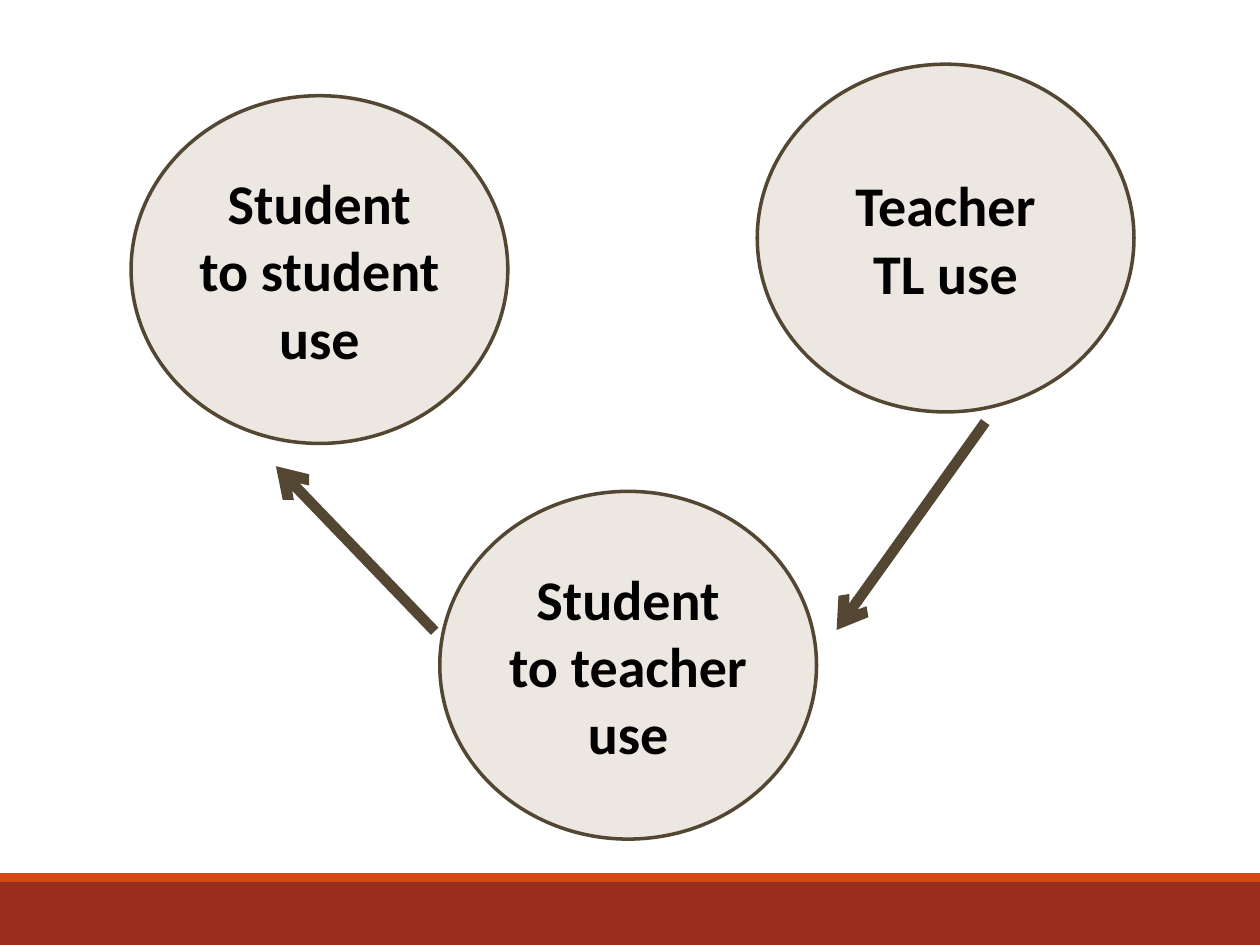
from lxml.etree import SubElement
from pptx import Presentation
from pptx.dml.color import RGBColor
from pptx.enum.shapes import MSO_CONNECTOR, MSO_SHAPE
from pptx.enum.text import MSO_ANCHOR, PP_ALIGN
from pptx.oxml.ns import qn
from pptx.util import Inches, Pt

BROWN = "534733"
CIRCLE_WIDTH, CIRCLE_HEIGHT = 2.99, 2.76


def color(hex_string):
    return RGBColor.from_string(hex_string)


def add_filled_shape(slide, kind, left, top, width, height, fill):
    shape = slide.shapes.add_shape(
        kind, Inches(left), Inches(top), Inches(width), Inches(height))
    shape.shadow.inherit = False
    shape.fill.solid()
    shape.fill.fore_color.rgb = color(fill)
    shape.line.fill.background()
    return shape


def add_circle(slide, left, top, text):
    circle = add_filled_shape(
        slide, MSO_SHAPE.OVAL, left, top, CIRCLE_WIDTH, CIRCLE_HEIGHT, "ECE8E1")
    circle.line.color.rgb = color(BROWN)
    circle.line.width = Pt(2)
    frame = circle.text_frame
    frame.word_wrap = True
    frame.vertical_anchor = MSO_ANCHOR.MIDDLE
    frame.margin_left = frame.margin_right = Inches(0.09)
    paragraph = frame.paragraphs[0]
    paragraph.text = text
    paragraph.alignment = PP_ALIGN.CENTER
    paragraph.font.name = "Calibri"
    paragraph.font.size = Pt(32)
    paragraph.font.bold = True
    paragraph.font.color.rgb = color("000000")


def add_arrow(slide, start, end):
    arrow = slide.shapes.add_connector(
        MSO_CONNECTOR.STRAIGHT, *map(Inches, start + end))
    arrow.line.color.rgb = color(BROWN)
    arrow.line.width = Pt(6)
    SubElement(arrow.line._get_or_add_ln(), qn("a:tailEnd"), type="arrow")
    SubElement(arrow._element.spPr, qn("a:effectLst"))


def main():
    presentation = Presentation()
    presentation.slide_width = Inches(10)
    presentation.slide_height = Inches(7.5)
    slide = presentation.slides.add_slide(presentation.slide_layouts[6])

    add_filled_shape(slide, MSO_SHAPE.RECTANGLE, 0, 7, 10, 0.5, "9B2D1F")
    add_filled_shape(slide, MSO_SHAPE.RECTANGLE, 0, 6.93, 10, 0.07, "D34817")

    add_circle(slide, 6.01, 0.51, "Teacher TL use")
    add_circle(slide, 3.49, 3.9, "Student to teacher use")
    add_circle(slide, 1.04, 0.76, "Student to student use")
    add_arrow(slide, (7.82, 3.35), (6.64, 5))
    add_arrow(slide, (3.45, 5.01), (2.19, 3.7))

    presentation.save("out.pptx")


if __name__ == "__main__":
    main()
